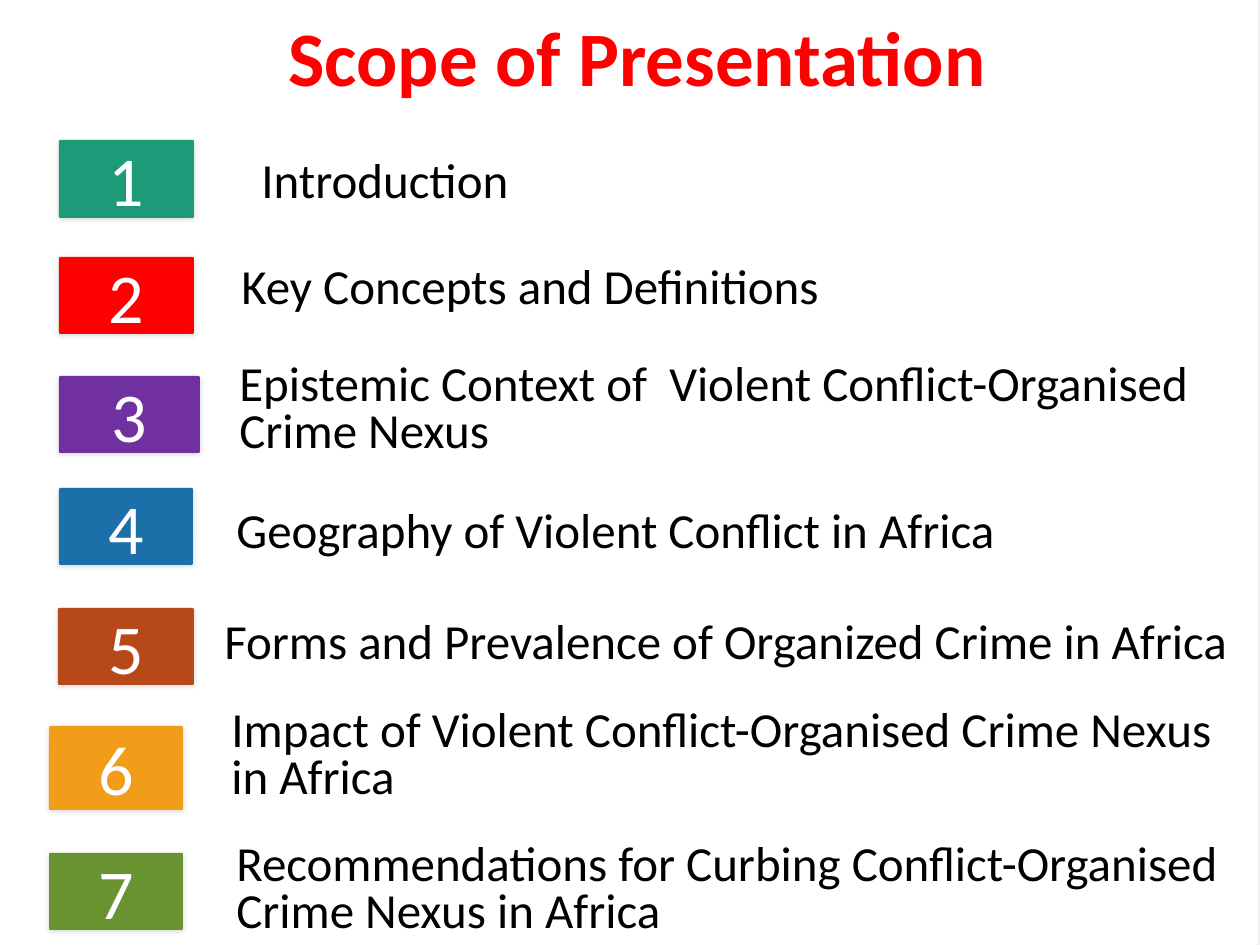
from lxml import etree
from pptx import Presentation
from pptx.dml.color import RGBColor
from pptx.enum.shapes import MSO_SHAPE
from pptx.enum.text import MSO_ANCHOR, MSO_AUTO_SIZE, PP_ALIGN
from pptx.oxml.ns import qn
from pptx.util import Emu, Pt

RECTANGLE = MSO_SHAPE.RECTANGLE
ROUNDED = MSO_SHAPE.ROUNDED_RECTANGLE
TOP, MIDDLE = MSO_ANCHOR.TOP, MSO_ANCHOR.MIDDLE
LEFT, CENTER = PP_ALIGN.LEFT, PP_ALIGN.CENTER
NO_AUTOFIT = MSO_AUTO_SIZE.NONE

EMU_PER_PX = 914400 / 126
WIDTH, HEIGHT = 1260, 945
FONT = "Calibri"
BLACK, WHITE, RED = "000000", "FFFFFF", "FF0000"

# Badge box, badge colour, topic box, topic
TOPICS = [
    ((59, 140, 135, 78), "1D9A78", (249, 155, 610, 47), "Introduction"),
    ((59, 257, 135, 77), RED, (229, 261, 989, 47), "Key Concepts and Definitions"),
    ((59, 376, 141, 77), "7030A0", (227, 358, 1011, 47),
     "Epistemic Context of  Violent Conflict-Organised Crime Nexus"),
    ((59, 488, 134, 77), "1D6FA9", (224, 505, 983, 47),
     "Geography of Violent Conflict in Africa"),
    ((58, 608, 136, 77), "B74919", (212, 616, 1057, 47),
     "Forms and Prevalence of Organized Crime in Africa"),
    ((49, 726, 134, 84), "F19D19", (219, 704, 1045, 88),
     "Impact of Violent Conflict-Organised Crime Nexus in Africa"),
    ((49, 853, 134, 77), "699331", (224, 838, 1033, 74),
     "Recommendations for Curbing Conflict-Organised Crime Nexus in Africa"),
]


def px(value):
    return Emu(round(value * EMU_PER_PX))


def color(value):
    return RGBColor.from_string(value)


def add_alpha(color_element, percent):
    etree.SubElement(color_element, qn("a:alpha")).set("val", str(percent * 1000))


def add_soft_shadow(shape):
    effects = etree.SubElement(shape._element.spPr, qn("a:effectLst"))
    shadow = etree.SubElement(effects, qn("a:outerShdw"), blurRad=str(Pt(3)),
                              dist=str(Pt(1)), dir="5400000", rotWithShape="0")
    shadow_color = etree.SubElement(shadow, qn("a:srgbClr"), val=BLACK)
    add_alpha(shadow_color, 15)


def add_box(shapes, kind, box, fill):
    shape = shapes.add_shape(kind, *map(px, box))
    shape.fill.solid()
    shape.fill.fore_color.rgb = color(fill)
    shape.line.fill.background()
    return shape


def write_text(shape, text, size, text_color, align=LEFT, anchor=TOP, bold=False, spacing=1.0):
    frame = shape.text_frame
    frame.word_wrap = True
    frame.auto_size = NO_AUTOFIT
    frame.vertical_anchor = anchor
    paragraph = frame.paragraphs[0]
    paragraph.alignment = align
    paragraph.line_spacing = spacing
    run = paragraph.add_run()
    run.text = text
    run.font.name = FONT
    run.font.size = Pt(size)
    run.font.bold = bold
    run.font.color.rgb = color(text_color)


def add_background(slide):
    tint = add_box(slide.shapes, RECTANGLE, (0, 0, WIDTH, HEIGHT), BLACK)
    tint.shadow.inherit = False
    add_alpha(tint._element.spPr.find(qn("a:solidFill"))[0], 6)
    page = add_box(slide.shapes, RECTANGLE, (-3, 0, WIDTH, HEIGHT), WHITE)
    page.shadow.inherit = False
    page.line.color.rgb = color(WHITE)
    page.line.width = Pt(1)


def add_title(slide, text):
    title = slide.shapes.title
    title.left, title.top, title.width, title.height = map(px, (15, 3, 1245, 157))
    write_text(title, text, 44, RED, CENTER, bold=True)
    # Bring the title in front of the background
    slide.shapes._spTree.append(title._element)


def add_topic(slide, number, badge_box, fill, text_box, text):
    group = slide.shapes.add_group_shape()
    badge = add_box(group.shapes, ROUNDED, badge_box, fill)
    badge.adjustments[0] = 0.02
    add_soft_shadow(badge)
    write_text(badge, str(number), 40, WHITE, CENTER, MIDDLE)
    label = group.shapes.add_textbox(*map(px, text_box))
    write_text(label, text, 28, BLACK, spacing=0.8)


def main():
    presentation = Presentation()
    presentation.slide_width, presentation.slide_height = px(WIDTH), px(HEIGHT)
    slide = presentation.slides.add_slide(presentation.slide_layouts[5])

    add_background(slide)
    for number, topic in enumerate(TOPICS, start=1):
        add_topic(slide, number, *topic)
    add_title(slide, "Scope of Presentation")

    presentation.save("out.pptx")


if __name__ == "__main__":
    main()
